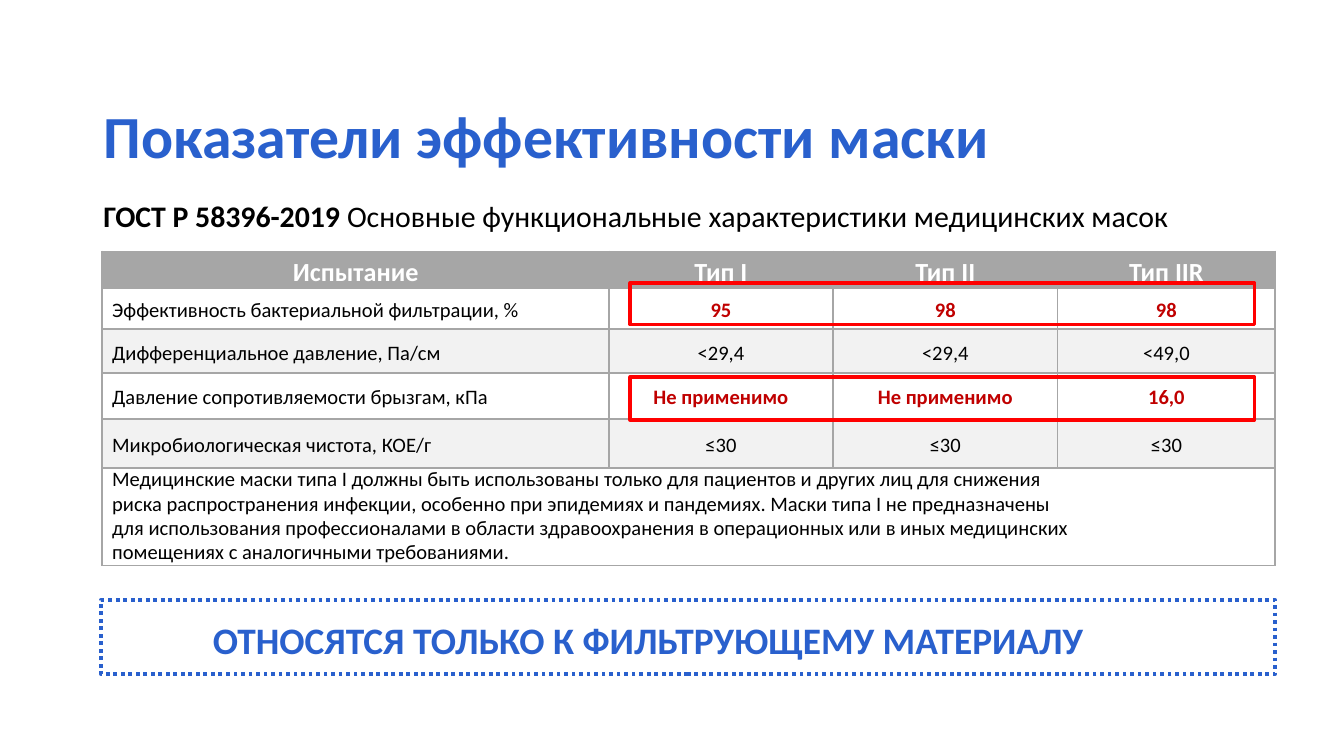
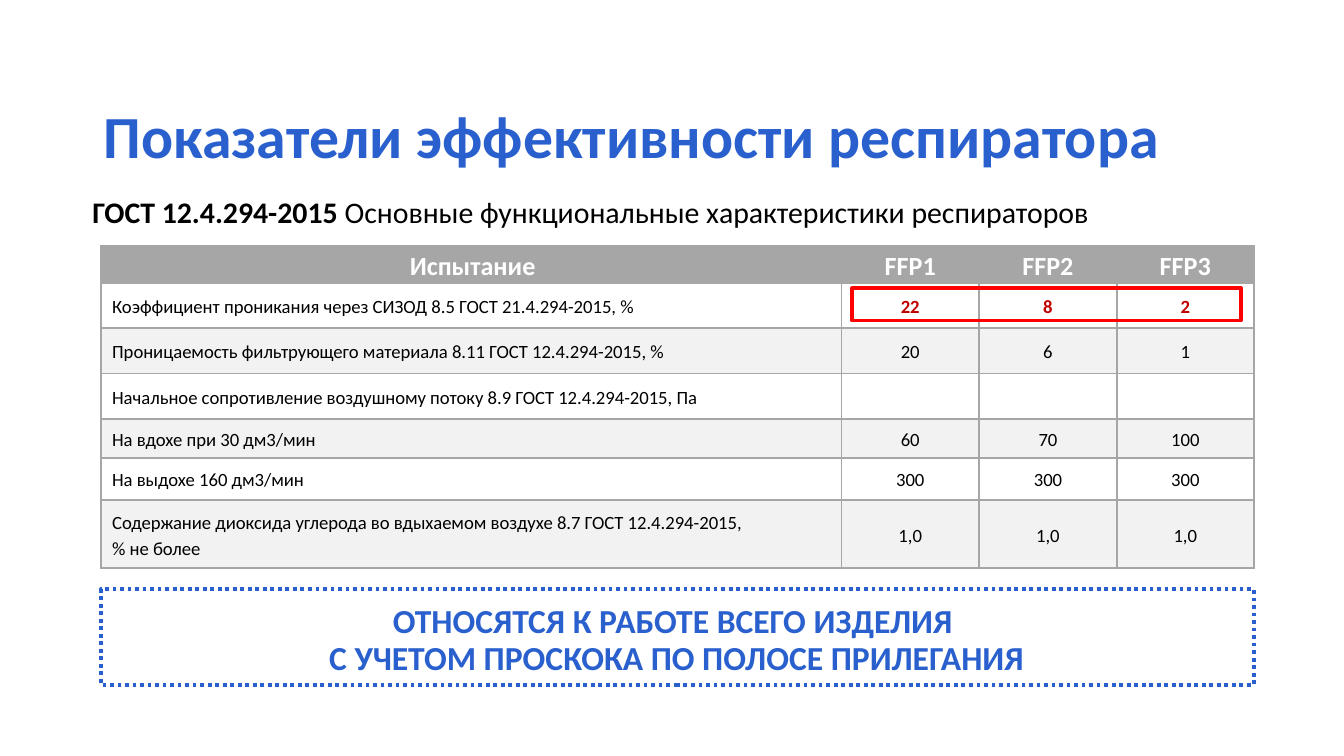
from copy import deepcopy

from lxml.etree import SubElement
from pptx import Presentation
from pptx.dml.color import RGBColor
from pptx.enum.dml import MSO_LINE
from pptx.enum.shapes import MSO_SHAPE
from pptx.enum.text import MSO_ANCHOR as ANCHOR, MSO_AUTO_SIZE as AUTO, PP_ALIGN as ALIGN
from pptx.oxml.ns import qn
from pptx.util import Pt

PX = 4572
SLIDE_SIZE = (2000, 1125)
TITLE_BOX = (134, 137, 1874, 128)

COLORS = {
    "blue": "2960CD", "black": "000000", "white": "FFFFFF", "gray": "A6A6A6",
    "stripe": "F2F2F2", "crimson": "C00000", "red": "FF0000",
}

FORMATS = {
    "title": {"size": Pt(32), "bold": True, "color": "blue"},
    "standard": {"size": Pt(16), "bold": True, "color": "black"},
    "subject": {"size": Pt(16), "bold": False, "color": "black"},
    "header": {"size": Pt(14), "bold": True, "color": "white"},
    "key": {"bold": True, "color": "crimson"},
    "plain": {"bold": False, "color": "black"},
    "conclusion": {"bold": True, "color": "blue"},
}

SLIDES = [
    {
        "title": "Показатели эффективности маски",
        "standard": "ГОСТ Р 58396-2019 ",
        "subject": "Основные функциональные характеристики медицинских масок",
        "subtitle_box": (134, 284, 1670, 74),
        "table_at": (152, 374),
        "columns": (754, 334, 334, 324),
        "heights": (55, 61, 65, 69, 73, 144),
        "insets": (15, 14),
        "size": 11,
        "key_rows": (1, 3),
        "rows": [
            ("Испытание", "Тип I", "Тип II", "Тип IIR"),
            ("Эффективность бактериальной фильтрации, %", "95", "98", "98"),
            ("Дифференциальное давление, Па/см", "<29,4", "<29,4", "<49,0"),
            ("Давление сопротивляемости брызгам, кПа", "Не применимо", "Не применимо", "16,0"),
            ("Микробиологическая чистота, КОЕ/г", "≤30", "≤30", "≤30"),
            ("Медицинские маски типа I должны быть использованы только для пациентов и других лиц для снижения \n"
             "риска распространения инфекции, особенно при эпидемиях и пандемиях. Маски типа I не предназначены \n"
             "для использования профессионалами в области здравоохранения в операционных или в иных медицинских \n"
             "помещениях с аналогичными требованиями.",),
        ],
        "key_frames": [(938, 421, 929, 62), (938, 561, 929, 64)],
        "conclusion": ["ОТНОСЯТСЯ ТОЛЬКО К ФИЛЬТРУЮЩЕМУ МАТЕРИАЛУ"],
        "conclusion_box": (297, 909, 1544, 88),
        "conclusion_frame": (150, 893, 1748, 110),
        "conclusion_size": 20,
        "conclusion_layout": {"alignment": ALIGN.LEFT},
    },
    {
        "title": "Показатели эффективности респиратора",
        "standard": "ГОСТ 12.4.294-2015 ",
        "subject": "Основные функциональные характеристики респираторов",
        "subtitle_box": (118, 279, 1714, 74),
        "table_at": (150, 366),
        "columns": (1102, 205, 205, 204),
        "heights": (55, 67, 68, 68, 58, 62, 102),
        "insets": (17, 12),
        "size": 10,
        "key_rows": (1,),
        "rows": [
            ("Испытание", "FFP1", "FFP2", "FFP3"),
            ("Коэффициент проникания через СИЗОД 8.5 ГОСТ 21.4.294-2015, %", "22", "8", "2"),
            ("Проницаемость фильтрующего материала 8.11 ГОСТ 12.4.294-2015, %", "20", "6", "1"),
            ("Начальное сопротивление воздушному потоку 8.9 ГОСТ 12.4.294-2015, Па", "", "", ""),
            ("На вдохе при 30 дм3/мин", "60", "70", "100"),
            ("На выдохе 160 дм3/мин", "300", "300", "300"),
            ("Содержание диоксида углерода во вдыхаемом воздухе 8.7 ГОСТ 12.4.294-2015, \n% не более",
             "1,0", "1,0", "1,0"),
        ],
        "key_frames": [(1268, 429, 579, 48)],
        "conclusion": ["ОТНОСЯТСЯ К РАБОТЕ ВСЕГО ИЗДЕЛИЯ ", "С УЧЕТОМ ПРОСКОКА ПО ПОЛОСЕ ПРИЛЕГАНИЯ"],
        "conclusion_box": (166, 887, 1682, 132),
        "conclusion_frame": (150, 877, 1716, 142),
        "conclusion_size": 18,
        "conclusion_layout": {"alignment": ALIGN.CENTER, "line_spacing": Pt(20)},
    },
]


def emu(lengths):
    return [length * PX for length in lengths]


def rgb(color):
    return RGBColor.from_string(COLORS[color])


def set_all(target, values):
    for name, value in values.items():
        setattr(target, name, value)


def format_run(run, style, **extra):
    values = {"name": "Calibri", **FORMATS[style], **extra}
    run.font.color.rgb = rgb(values.pop("color"))
    set_all(run.font, values)


def format_runs(paragraph, style, **extra):
    for run in paragraph.runs:
        format_run(run, style, **extra)
    for line_break in paragraph._p.findall(qn("a:br")):
        line_break.insert(0, deepcopy(paragraph.runs[0]._r.rPr))


def add_text_frame(slide, box):
    frame = slide.shapes.add_textbox(*emu(box)).text_frame
    set_all(frame, {"word_wrap": True, "auto_size": AUTO.SHAPE_TO_FIT_TEXT})
    return frame


def add_title(slide, text):
    title = slide.shapes.title
    set_all(title, dict(zip(("left", "top", "width", "height"), emu(TITLE_BOX))))
    title.text = text
    set_all(title.text_frame, {"word_wrap": True, "auto_size": AUTO.NONE, "vertical_anchor": ANCHOR.TOP})
    heading = title.text_frame.paragraphs[0]
    set_all(heading, {"alignment": ALIGN.LEFT, "line_spacing": 1.0})
    format_runs(heading, "title")


def add_subtitle(slide, content):
    paragraph = add_text_frame(slide, content["subtitle_box"]).paragraphs[0]
    for part in ("standard", "subject"):
        run = paragraph.add_run()
        run.text = content[part]
        format_run(run, part)


def add_borders(cell):
    properties = cell._tc.get_or_add_tcPr()
    for side in ("a:lnL", "a:lnR", "a:lnT", "a:lnB"):
        border = SubElement(properties, qn(side), w=str(Pt(1)))
        fill = SubElement(border, qn("a:solidFill"))
        SubElement(fill, qn("a:srgbClr"), val=COLORS["gray"])


def fill_cell(cell, color):
    if color:
        cell.fill.solid()
        cell.fill.fore_color.rgb = rgb(color)
    else:
        cell.fill.background()


def add_tests(slide, content):
    rows, columns, heights = content["rows"], content["columns"], content["heights"]
    box = (*content["table_at"], sum(columns), sum(heights))
    table = slide.shapes.add_table(len(rows), len(columns), *emu(box)).table
    for column, width in zip(table.columns, emu(columns)):
        column.width = width
    for row, height in zip(table.rows, emu(heights)):
        row.height = height
    label_inset, value_inset = emu(content["insets"])
    for r, texts in enumerate(rows):
        is_note = len(texts) == 1
        background = "gray" if r == 0 else "stripe" if r % 2 == 0 else None
        for c in range(len(columns)):
            cell = table.cell(r, c)
            set_all(cell, {
                "margin_left": value_inset if c else label_inset, "margin_right": value_inset,
                "margin_top": 0, "margin_bottom": 0, "vertical_anchor": ANCHOR.MIDDLE,
            })
            add_borders(cell)
            fill_cell(cell, background)
        for c, text in enumerate(texts):
            paragraph = table.cell(r, c).text_frame.paragraphs[0]
            paragraph.text = text.replace("\n", "\v")
            set_all(paragraph, {
                "alignment": ALIGN.CENTER if r == 0 or c else ALIGN.LEFT,
                "line_spacing": Pt(13) if is_note else 1.15,
            })
            if r == 0:
                format_runs(paragraph, "header")
            else:
                style = "key" if c and r in content["key_rows"] else "plain"
                format_runs(paragraph, style, size=Pt(content["size"]))
        if is_note:
            table.cell(r, 0).merge(table.cell(r, len(columns) - 1))


def add_frame(slide, box, color, dash=None):
    frame = slide.shapes.add_shape(MSO_SHAPE.RECTANGLE, *emu(box))
    frame.shadow.inherit = False
    frame.fill.background()
    frame.line.color.rgb = rgb(color)
    set_all(frame.line, {"width": Pt(2), "dash_style": dash})


def add_conclusion(slide, content):
    frame = add_text_frame(slide, content["conclusion_box"])
    frame.text = "\n".join(content["conclusion"])
    for paragraph in frame.paragraphs:
        set_all(paragraph, content["conclusion_layout"])
        format_runs(paragraph, "conclusion", size=Pt(content["conclusion_size"]))
    add_frame(slide, content["conclusion_frame"], "blue", MSO_LINE.ROUND_DOT)


def main():
    deck = Presentation()
    deck.slide_width, deck.slide_height = emu(SLIDE_SIZE)
    for content in SLIDES:
        slide = deck.slides.add_slide(deck.slide_layouts[5])
        add_title(slide, content["title"])
        add_subtitle(slide, content)
        add_tests(slide, content)
        for box in content["key_frames"]:
            add_frame(slide, box, "red")
        add_conclusion(slide, content)
    deck.save("out.pptx")


if __name__ == "__main__":
    main()
